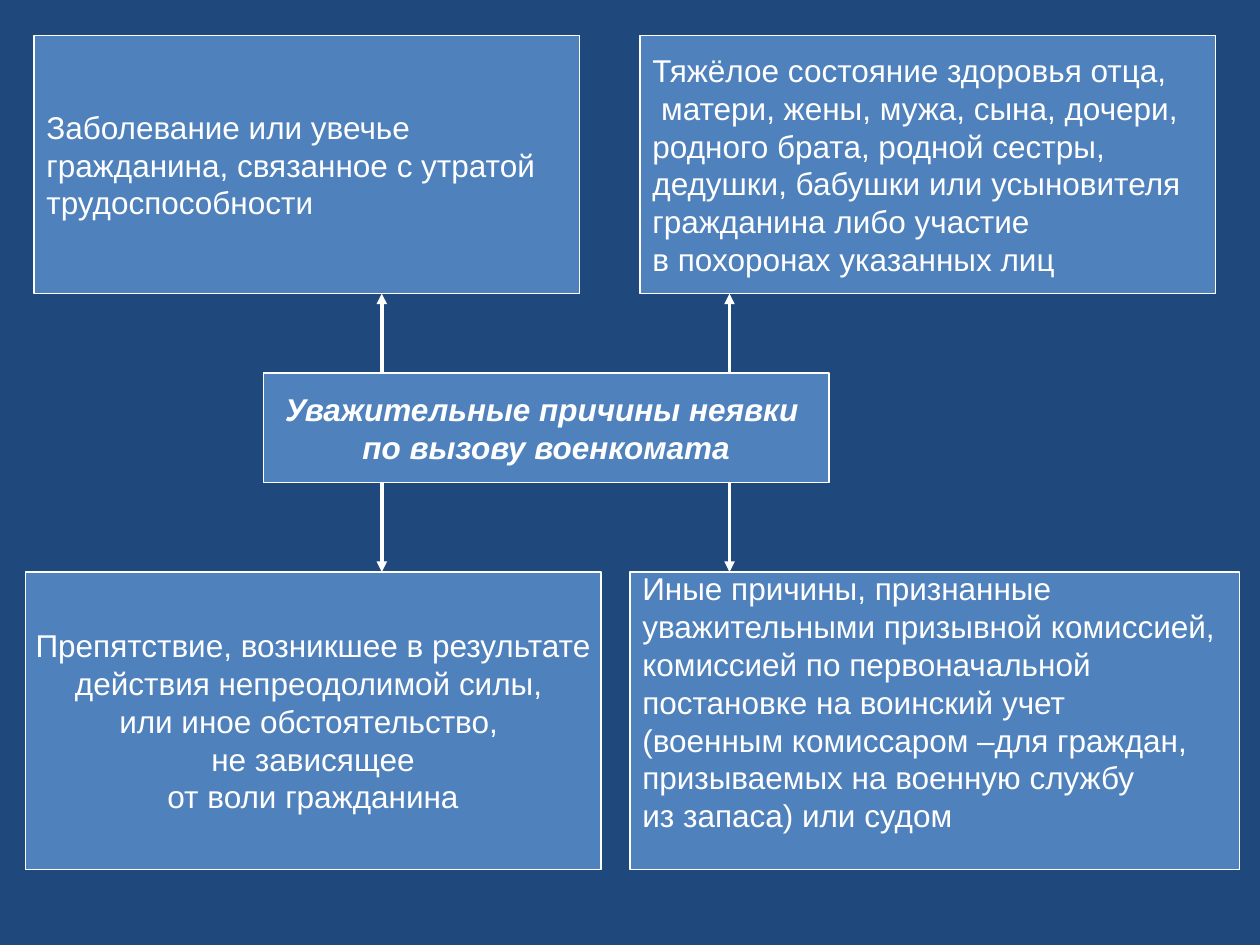
from dataclasses import dataclass
from itertools import product

from lxml.etree import SubElement
from pptx import Presentation
from pptx.dml.color import RGBColor as Rgb
from pptx.enum.shapes import MSO_CONNECTOR as Link, MSO_SHAPE as Form
from pptx.enum.text import MSO_ANCHOR as Anchor, PP_ALIGN as Align
from pptx.oxml.ns import qn
from pptx.util import Inches, Pt


@dataclass(frozen=True)
class Theme:
    back: Rgb = Rgb(0x1F, 0x49, 0x7D)
    fill: Rgb = Rgb(0x4F, 0x81, 0xBD)
    ink: Rgb = Rgb(0xFF, 0xFF, 0xFF)
    face: str = "Arial"
    size: Pt = Pt(18)
    edge: Pt = Pt(0.75)
    arrow: Pt = Pt(2)


THEME = Theme()
CELL = Inches(0.1)  # grid of 100 columns by 75 rows

# Rows shared by the boxes and the arrows
TOP, TOP_H = 2.8, 20.5
MID, MID_H = 29.6, 8.7
LOW, LOW_H = 45.4, 23.6
ARROW_COLS = (30.3, 57.9)
ARROW_ROWS = ((MID, TOP + TOP_H), (MID + MID_H, LOW))

TITLE = ["Уважительные причины неявки ", "по вызову военкомата"]

# Left, top, width, height, alignment, lines, bottom inset in cells
REASONS = [
    (2.7, TOP, 43.3, TOP_H, Align.LEFT, [
        "Заболевание или увечье",
        "гражданина, связанное с утратой",
        "трудоспособности"], 0.5),
    (2, LOW, 45.7, LOW_H, Align.CENTER, [
        "Препятствие, возникшее в результате",
        "действия непреодолимой силы, ",
        "или иное обстоятельство, ",
        "не зависящее",
        "от воли гражданина"], 0.5),
    (50, LOW, 48.4, LOW_H, Align.LEFT, [
        "Иные причины, признанные",
        "уважительными призывной комиссией,",
        "комиссией по первоначальной",
        "постановке на воинский учет",
        "(военным комиссаром –для граждан,",
        "призываемых на военную службу",
        "из запаса) или судом"], 3.5),
    (50.8, TOP, 45.7, TOP_H, Align.LEFT, [
        "Тяжёлое состояние здоровья отца,",
        " матери, жены, мужа, сына, дочери,",
        "родного брата, родной сестры,",
        "дедушки, бабушки или усыновителя",
        "гражданина либо участие",
        "в похоронах указанных лиц"], 0.5),
]


def grid(*cells):
    return [round(n * CELL) for n in cells]


def assign(item, **values):
    for name, value in values.items():
        setattr(item, name, value)


def paint(box):
    box.fill.solid()
    box.fill.fore_color.rgb = THEME.fill
    box.line.color.rgb = THEME.ink
    box.line.width = THEME.edge


def write(box, lines, align, inset=0.5, **style):
    frame = box.text_frame
    assign(frame, word_wrap=False, vertical_anchor=Anchor.MIDDLE,
           margin_bottom=round(inset * CELL))
    for i, line in enumerate(lines):
        para = frame.add_paragraph() if i else frame.paragraphs[0]
        para.alignment = align
        run = para.add_run()
        run.text = line
        assign(run.font, name=THEME.face, size=THEME.size, **style)
        run.font.color.rgb = THEME.ink


def add_box(slide, left, top, width, height, align, lines, inset):
    box = slide.shapes.add_shape(
        Form.RECTANGLE, *grid(left, top, width, height))
    box.shadow.inherit = False
    paint(box)
    write(box, lines, align, inset)


def add_title(slide):
    box = slide.shapes.title
    left, top, width, height = grid(20.9, MID, 44.9, MID_H)
    assign(box, left=left, top=top, width=width, height=height)
    paint(box)
    write(box, TITLE, Align.CENTER, bold=True, italic=True)


def add_arrow(slide, col, start, end):
    arrow = slide.shapes.add_connector(
        Link.STRAIGHT, *grid(col, start, col, end))
    arrow.line.color.rgb = THEME.ink
    arrow.line.width = THEME.arrow
    SubElement(arrow.line._get_or_add_ln(), qn("a:tailEnd"), type="triangle")
    SubElement(arrow._element.spPr, qn("a:effectLst"))


def main():
    deck = Presentation()
    assign(deck, slide_width=100 * CELL, slide_height=75 * CELL)
    slide = deck.slides.add_slide(deck.slide_layouts[5])
    slide.background.fill.solid()
    slide.background.fill.fore_color.rgb = THEME.back

    # Central topic and the four reasons around it
    add_title(slide)
    for reason in REASONS:
        add_box(slide, *reason)

    # Arrows from the topic up and down to the reasons
    for (start, end), col in product(ARROW_ROWS, ARROW_COLS):
        add_arrow(slide, col, start, end)
    deck.save("out.pptx")


if __name__ == "__main__":
    main()
